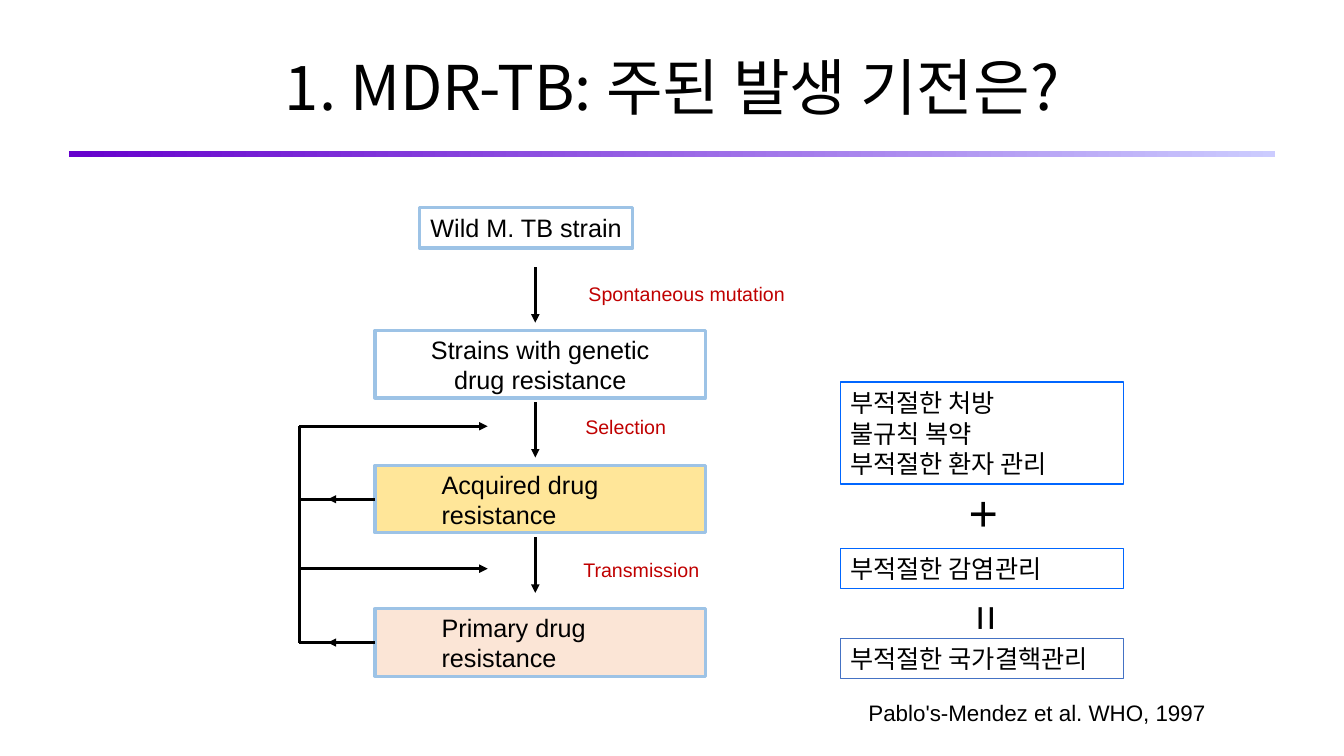
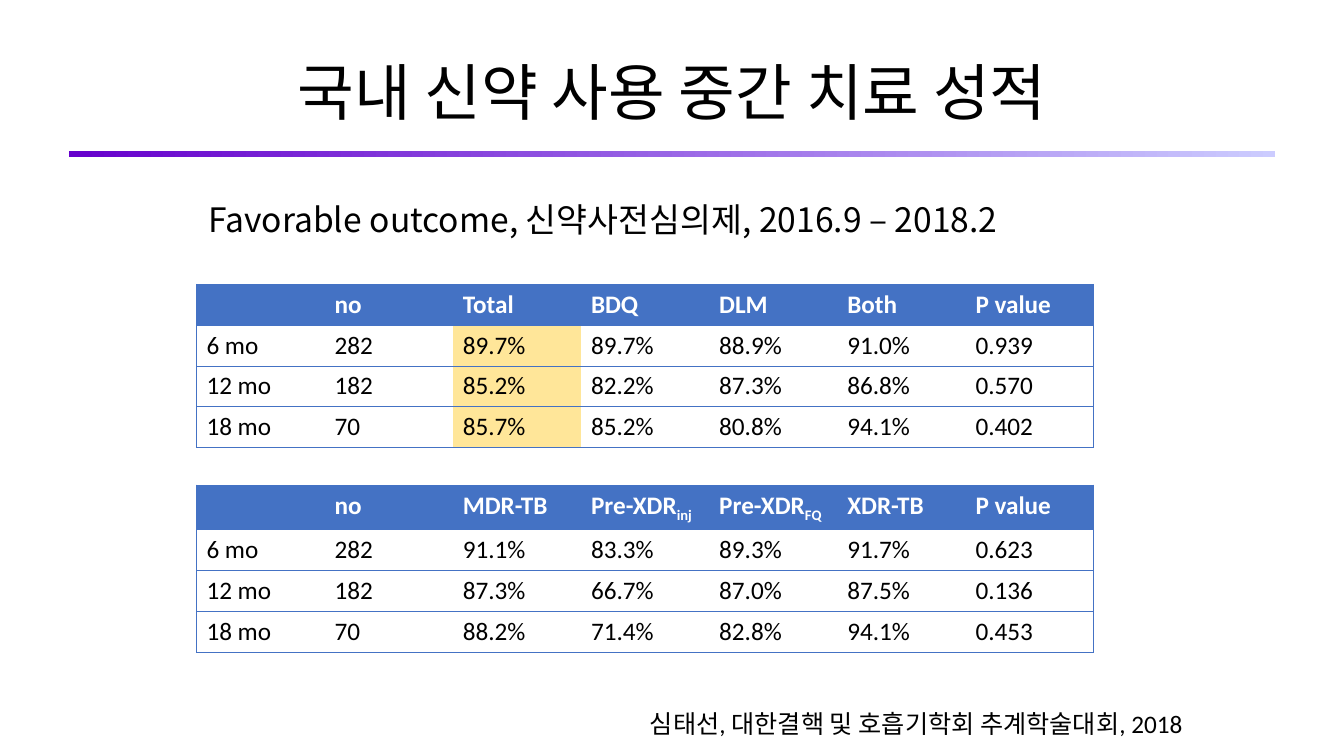
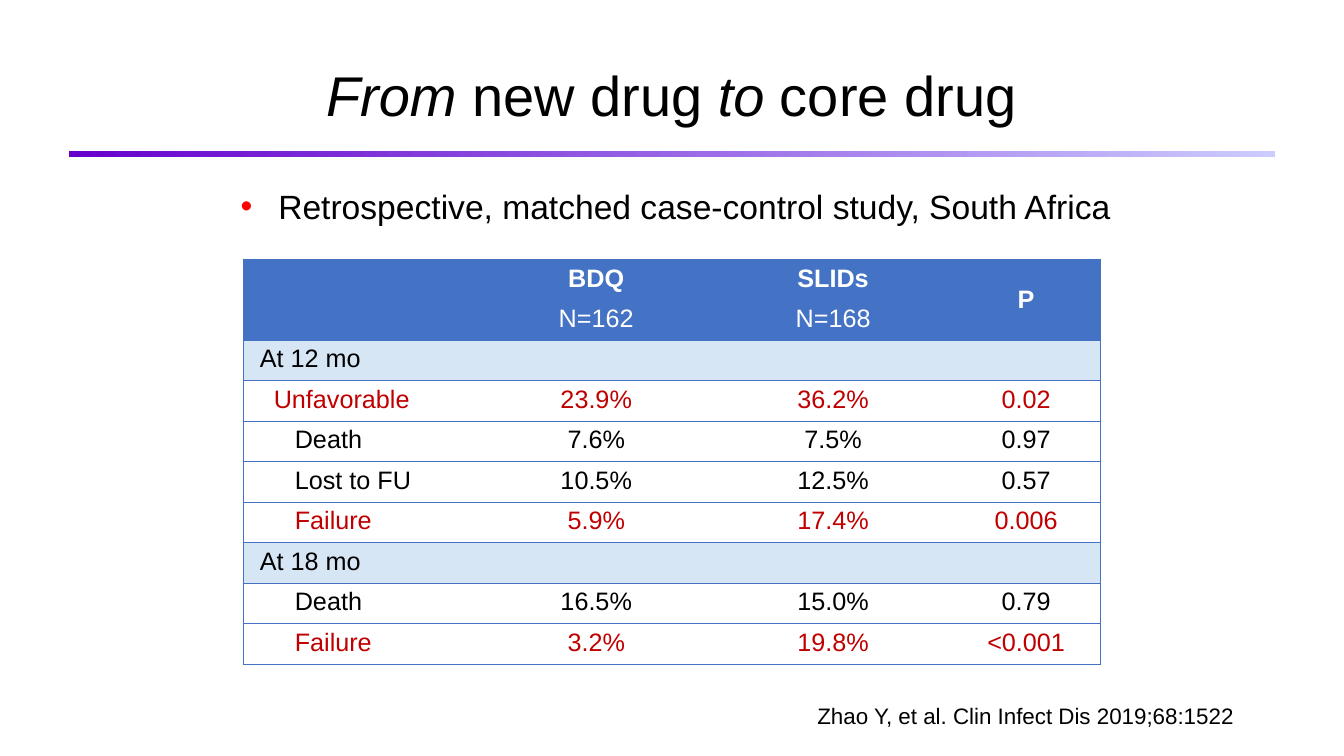
"""Three slides on drug-resistant tuberculosis: mechanism, interim results and a case-control study."""
from dataclasses import dataclass

from lxml import etree
from pptx import Presentation
from pptx import util as u
from pptx.dml.color import RGBColor
from pptx.enum import shapes, text
from pptx.oxml.ns import qn

LEFT, CENTER, RIGHT = text.PP_ALIGN.LEFT, text.PP_ALIGN.CENTER, text.PP_ALIGN.RIGHT
NO_GRID_STYLE = "{2D5ABB26-0587-4C30-8999-92F81FD0307C}"


@dataclass(frozen=True)
class Theme:
    black: str = "000000"
    white: str = "FFFFFF"
    red: str = "C00000"
    bullet: str = "FF0000"
    blue: str = "4472C4"
    bright_blue: str = "0066FF"
    sky: str = "9DC3E6"
    pale_blue: str = "D6E6F4"
    yellow: str = "FFE699"
    peach: str = "FBE5D6"
    band_start: str = "6600CC"
    band_end: str = "CCCCFF"
    title: int = 44
    subtitle: int = 24
    body: int = 18
    source: int = 16
    label: int = 14
    sans: str = "Arial"
    table: str = "Calibri"
    korean: str = "Noto Sans CJK KR"


T = Theme()


def rgb(code):
    return RGBColor.from_string(code)


def cm(*lengths):
    return [u.Cm(n) for n in lengths]


def style(p, size=T.body, color=T.black, name=T.sans, bold=False, align=LEFT):
    p.alignment = align
    f = p.font
    f.size, f.bold, f.name = u.Pt(size), bold, name
    f.color.rgb = rgb(color)
    latin = f._element.find(qn("a:latin"))
    ea = etree.Element(qn("a:ea"), typeface=T.korean)
    latin.addnext(ea)


def write(tf, content, **look):
    for i, line in enumerate(content.split("\n")):
        p = tf.paragraphs[0] if i == 0 else tf.add_paragraph()
        p.add_run().text = line
        style(p, **look)


def add_text(s, at, content, wrap=False, **look):
    tf = s.shapes.add_textbox(*cm(*at)).text_frame
    tf.word_wrap = wrap
    write(tf, content, **look)
    return tf


def add_box(s, at, content, line, width, fill=None, kind="RECTANGLE", indent=0.25, **look):
    sp = s.shapes.add_shape(shapes.MSO_SHAPE[kind], *cm(*at))
    sp.shadow.inherit = False
    if fill:
        sp.fill.solid()
        sp.fill.fore_color.rgb = rgb(fill)
    else:
        sp.fill.background()
    sp.line.color.rgb = rgb(line)
    sp.line.width = u.Pt(width)
    tf = sp.text_frame
    tf.word_wrap = True
    tf.vertical_anchor = text.MSO_ANCHOR.MIDDLE
    tf.margin_left = u.Cm(indent)
    write(tf, content, **look)
    return sp


def add_line(s, start, end, arrow=False):
    cx = s.shapes.add_connector(shapes.MSO_CONNECTOR.STRAIGHT, *cm(*start, *end))
    cx.line.color.rgb = rgb(T.black)
    cx.line.width = u.Pt(2)
    if arrow:
        etree.SubElement(cx.line._get_or_add_ln(), qn("a:tailEnd"), type="triangle")
    etree.SubElement(cx._element.spPr, qn("a:effectLst"))
    return cx


def add_slide(prs, layout, title_at, runs, size=T.title, name=T.sans):
    """Start a slide with its title, given as (text, italic) runs, and the gradient band."""
    s = prs.slides.add_slide(prs.slide_layouts[layout])
    sp = s.shapes.title
    sp.left, sp.top, sp.width, sp.height = cm(*title_at)
    tf = sp.text_frame
    tf.auto_size = text.MSO_AUTO_SIZE.NONE
    tf.vertical_anchor = text.MSO_ANCHOR.MIDDLE
    p = tf.paragraphs[0]
    p.line_spacing = 0.9
    for content, italic in runs:
        r = p.add_run()
        r.text, r.font.italic = content, italic
    style(p, size, name=name, align=CENTER)
    band = s.shapes.add_shape(shapes.MSO_SHAPE.RECTANGLE, *cm(1.73, 3.81, 30.4, 0.15))
    band.shadow.inherit = False
    band.line.fill.background()
    band.fill.gradient()
    band.fill.gradient_angle = 0
    for stop, color in zip(band.fill.gradient_stops, (T.band_start, T.band_end)):
        stop.color.rgb = rgb(color)
    return s


def border(cell, sides):
    """Rule the named sides (L, R, T, B) of a cell."""
    tcPr = cell._tc.get_or_add_tcPr()
    for i, side in enumerate(sides):
        ln = etree.Element(qn(f"a:ln{side}"), w=str(u.Pt(0.5)))
        fill = etree.SubElement(ln, qn("a:solidFill"))
        etree.SubElement(fill, qn("a:srgbClr"), val=T.blue)
        tcPr.insert(i, ln)


def add_table(s, left, top, widths, row_height, rows):
    """Add a table ruled between rows and around the outside."""
    frame = s.shapes.add_table(len(rows), len(widths), *cm(left, top, sum(widths), row_height * len(rows)))
    tbl = frame.table
    tbl.first_row = tbl.horz_banding = False
    tbl._tbl.tblPr.find(qn("a:tableStyleId")).text = NO_GRID_STYLE
    for col, width in zip(tbl.columns, widths):
        col.width = u.Cm(width)
    for row in tbl.rows:
        row.height = u.Cm(row_height)
        for i, cell in enumerate(row.cells):
            border(cell, "L" * (i == 0) + "R" * (i == len(widths) - 1) + "TB")
    return tbl


def set_cell(cell, content, fill=None, **look):
    write(cell.text_frame, content, **look)
    if fill:
        cell.fill.solid()
        cell.fill.fore_color.rgb = rgb(fill)


def outcome_table(s, top, rows, marked=None):
    """Add a results table; `marked` is the highlighted column."""
    tbl = add_table(s, 4.95, top, [3.23] * 7, 1.03, rows)
    for i, row in enumerate(rows):
        for j, content in enumerate(row):
            cell = tbl.cell(i, j)
            if i:
                set_cell(cell, content, T.yellow if j == marked else None, name=T.table)
                continue
            base, _, sub = content.partition("_")
            set_cell(cell, base, T.blue, name=T.table, color=T.white, bold=True)
            if sub:
                r = cell.text_frame.paragraphs[0].add_run()
                r.text = sub
                r.font._element.set("baseline", "-25000")


def mechanism_slide(prs):
    s = add_slide(prs, 5, (2.34, 1.02, 29.21, 2.54), [("1. MDR-TB: 주된 발생 기전은?", False)], name=T.korean)
    add_box(s, (10.57, 5.23, 5.38, 1.02), "Wild M. TB strain", T.sky, 2.25, align=CENTER)
    stages = [
        (8.33, "Strains with genetic\ndrug resistance", None, 0.25, CENTER),
        (11.73, "Acquired drug\nresistance", T.yellow, 1.68, LEFT),
        (15.34, "Primary drug\nresistance", T.peach, 1.68, LEFT),
    ]
    boxes = [add_box(s, (9.45, top, 8.33, 1.7), content, T.sky, 2.25, fill,
                     "FLOWCHART_PROCESS", indent, align=align)
             for top, content, fill, indent, align in stages]
    steps = [
        (6.73, "Spontaneous mutation", (14.58, 6.99, 5.49, 0.86)),
        (10.13, "Selection", (14.5, 10.34, 2.57, 0.86)),
        (13.54, "Transmission", (14.45, 13.94, 3.45, 0.86)),
    ]
    for top, content, at in steps:
        add_line(s, (13.49, top), (13.49, top + 1.4), arrow=True)
        add_text(s, at, content, size=T.label, color=T.red)

    trunk = 7.54
    for box, y in zip(boxes[1:], (10.74, 14.33)):
        middle = (box.top + box.height / 2) / u.Cm(1)
        branch = add_line(s, (9.45, middle), (trunk, middle))
        branch.begin_connect(box, 1)
        add_line(s, (8.71, middle), (8.26, middle), arrow=True)
        add_line(s, (trunk, y), (12.29, y), arrow=True)
    add_line(s, (trunk, middle), (trunk, 10.74))

    causes = [
        (9.63, 2.57, "부적절한 처방\n불규칙 복약\n부적절한 환자 관리", T.bright_blue, 1),
        (13.82, 1.02, "부적절한 감염관리", T.bright_blue, 0.75),
        (16.08, 1.02, "부적절한 국가결핵관리", T.blue, 0.75),
    ]
    for top, height, content, line, width in causes:
        add_box(s, (21.18, top, 7.14, height), content, line, width, name=T.korean)
    add_text(s, (24.16, 12.01, 1.19, 1.8), "+", size=36)
    equals = add_text(s, (23.85, 15.01, 1.88, 0.84), "=", size=32)
    equals._txBody.bodyPr.set("vert", "eaVert")
    add_text(s, (20.62, 17.5, 10.01, 0.94), "Pablo's-Mendez et al. WHO, 1997", True, size=T.source, align=RIGHT)


def interim_slide(prs):
    s = add_slide(prs, 5, (2.34, 1.02, 29.21, 2.79), [("국내 신약 사용 중간 치료 성적", False)])
    add_text(s, (5, 4.9, 22.23, 1.27), "Favorable outcome, 신약사전심의제, 2016.9 – 2018.2", True,
             size=T.subtitle, name=T.korean)
    outcome_table(s, 7.16, [
        ("", "no", "Total", "BDQ", "DLM", "Both", "P value"),
        ("6 mo", "282", "89.7%", "89.7%", "88.9%", "91.0%", "0.939"),
        ("12 mo", "182", "85.2%", "82.2%", "87.3%", "86.8%", "0.570"),
        ("18 mo", "70", "85.7%", "85.2%", "80.8%", "94.1%", "0.402"),
    ], marked=2)
    outcome_table(s, 12.22, [
        ("", "no", "MDR-TB", "Pre-XDR_inj", "Pre-XDR_FQ", "XDR-TB", "P value"),
        ("6 mo", "282", "91.1%", "83.3%", "89.3%", "91.7%", "0.623"),
        ("12 mo", "182", "87.3%", "66.7%", "87.0%", "87.5%", "0.136"),
        ("18 mo", "70", "88.2%", "71.4%", "82.8%", "94.1%", "0.453"),
    ])
    add_text(s, (16.13, 17.73, 16, 1.02), "심태선, 대한결핵 및 호흡기학회 추계학술대회, 2018", True, name=T.table)


def case_control_slide(prs):
    s = add_slide(prs, 1, (5.97, 1.02, 21.89, 2.92),
                  [("From ", True), ("new drug ", False), ("to", True), (" core drug", False)], size=40)
    body = s.placeholders[1]
    body.left, body.top, body.width, body.height = cm(4.72, 4.55, 24.61, 1.27)
    tf = body.text_frame
    tf.auto_size = text.MSO_AUTO_SIZE.NONE
    write(tf, "Retrospective, matched case-control study, South Africa", size=T.subtitle, align=CENTER)
    p = tf.paragraphs[0]
    p.space_before = u.Pt(0)
    pPr = p._p.get_or_add_pPr()
    pPr.set("marL", str(u.Cm(0.95)))
    pPr.set("indent", str(u.Cm(-0.95)))
    defaults = pPr.find(qn("a:defRPr"))
    color = etree.Element(qn("a:buClr"))
    etree.SubElement(color, qn("a:srgbClr"), val=T.bullet)
    defaults.addprevious(color)
    defaults.addprevious(etree.Element(qn("a:buChar"), char="•"))

    rows = [
        ("", "BDQ", "SLIDs", "P"),
        ("", "N=162", "N=168", ""),
        ("At 12 mo", "", "", ""),
        ("Unfavorable", "23.9%", "36.2%", "0.02"),
        ("Death", "7.6%", "7.5%", "0.97"),
        ("Lost to FU", "10.5%", "12.5%", "0.57"),
        ("Failure", "5.9%", "17.4%", "0.006"),
        ("At 18 mo", "", "", ""),
        ("Death", "16.5%", "15.0%", "0.79"),
        ("Failure", "3.2%", "19.8%", "<0.001"),
    ]
    tbl = add_table(s, 6.12, 6.53, [5.92, 5.97, 5.97, 3.76], 1.02, rows)
    tbl.cell(0, 3).merge(tbl.cell(1, 3))
    tbl.cell(0, 3).vertical_anchor = text.MSO_ANCHOR.MIDDLE
    for i, row in enumerate(rows):
        header, section = i < 2, row[0].startswith("At ")
        fill = T.blue if header else T.pale_blue if section else None
        color = T.white if header else T.red if row[0] in ("Unfavorable", "Failure") else T.black
        for j, content in enumerate(row):
            cell = tbl.cell(i, j)
            if not cell.is_spanned:
                set_cell(cell, content, fill, color=color, bold=i == 0, align=CENTER if j else LEFT)
        tbl.cell(i, 0).margin_left = u.Cm(0.43 if section else 0.78 if row[0] == "Unfavorable" else 1.31)
    add_text(s, (20.35, 17.58, 11.15, 0.94), "Zhao Y, et al. Clin Infect Dis 2019;68:1522", size=T.source)


def main():
    prs = Presentation()
    prs.slide_width, prs.slide_height = cm(33.87, 19.05)
    mechanism_slide(prs)
    interim_slide(prs)
    case_control_slide(prs)
    prs.save("out.pptx")


if __name__ == "__main__":
    main()
